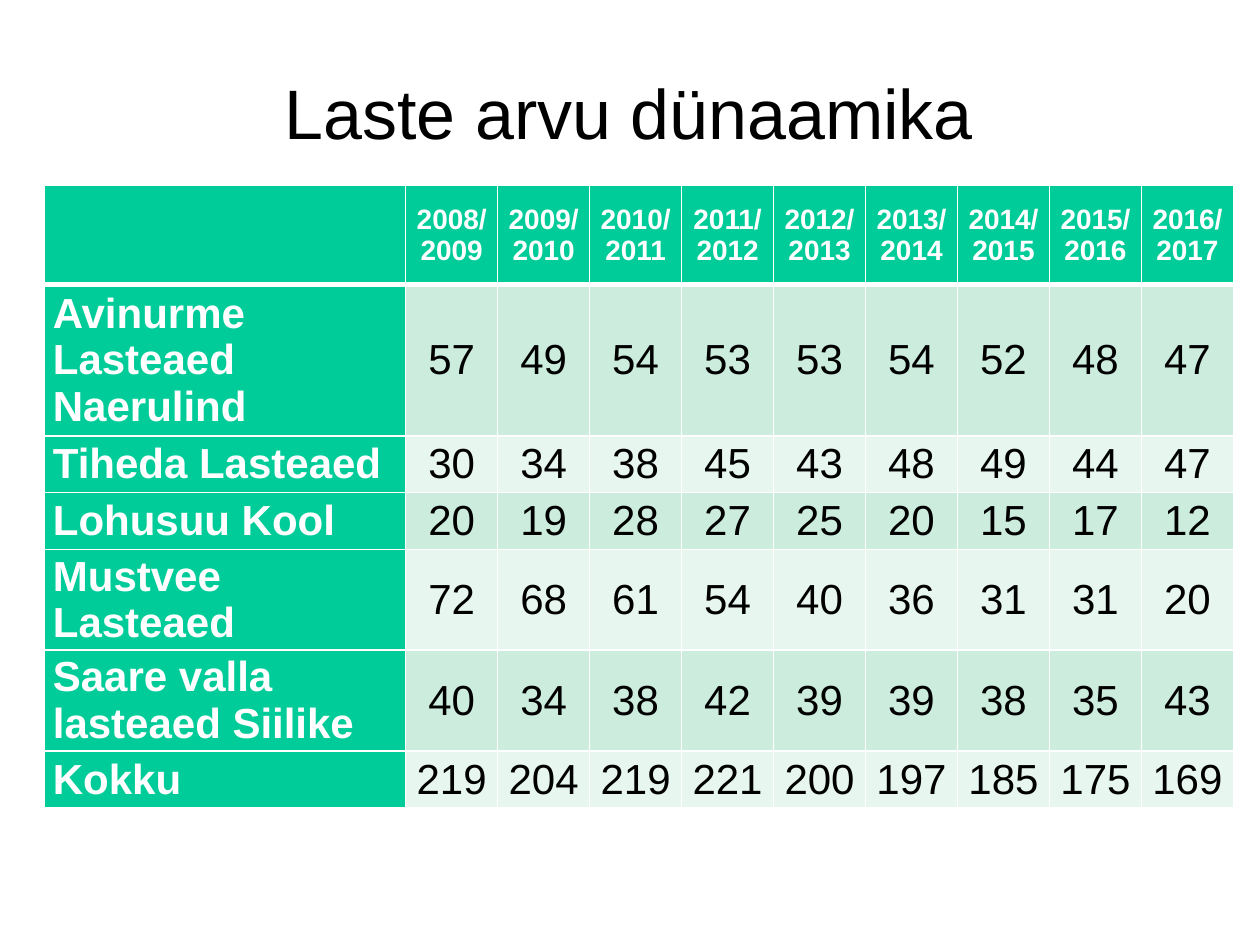
import dataclasses

import lxml.etree
import pptx
import pptx.dml.color
import pptx.enum.text
import pptx.oxml.ns
import pptx.util

Inches = pptx.util.Inches
Pt = pptx.util.Pt
RGBColor = pptx.dml.color.RGBColor
Align = pptx.enum.text.PP_ALIGN
MIDDLE = pptx.enum.text.MSO_ANCHOR.MIDDLE
qn = pptx.oxml.ns.qn

BLACK = RGBColor(0x00, 0x00, 0x00)
WHITE = RGBColor(0xFF, 0xFF, 0xFF)
GREEN = RGBColor(0x00, 0xCC, 0x99)
BANDS = (RGBColor(0xCC, 0xEC, 0xDE), RGBColor(0xE7, 0xF6, 0xEF))


@dataclasses.dataclass(frozen=True)
class CellStyle:
    size: int
    color: RGBColor
    bold: bool
    align: Align


YEAR = CellStyle(16, WHITE, True, Align.CENTER)
INSTITUTION = CellStyle(24, WHITE, True, Align.LEFT)
COUNT = CellStyle(24, BLACK, False, Align.CENTER)

SCHOOL_YEARS = ["2008/\n2009", "2009/\n2010", "2010/2011", "2011/2012", "2012/2013",
                "2013/2014", "2014/\n2015", "2015/\n2016", "2016/\n2017"]
CHILDREN = {
    "Avinurme Lasteaed Naerulind": [57, 49, 54, 53, 53, 54, 52, 48, 47],
    "Tiheda Lasteaed": [30, 34, 38, 45, 43, 48, 49, 44, 47],
    "Lohusuu Kool": [20, 19, 28, 27, 25, 20, 15, 17, 12],
    "Mustvee Lasteaed": [72, 68, 61, 54, 40, 36, 31, 31, 20],
    "Saare valla lasteaed Siilike": [40, 34, 38, 42, 39, 39, 38, 35, 43],
    "Kokku": [219, 204, 219, 221, 200, 197, 185, 175, 169],
}


def apply(target: object, values: dict) -> None:
    for name, value in values.items():
        setattr(target, name, value)


def style_font(font, size: int, color: RGBColor, bold: bool) -> None:
    apply(font, {"name": "Arial", "size": Pt(size), "bold": bold})
    font.color.rgb = color


def add_borders(cell, top: int, bottom: int) -> None:
    properties = cell._tc.get_or_add_tcPr()
    for side, width in {"L": 1, "R": 1, "T": top, "B": bottom}.items():
        line = lxml.etree.SubElement(properties, qn(f"a:ln{side}"), w=str(Pt(width)))
        fill = lxml.etree.SubElement(line, qn("a:solidFill"))
        lxml.etree.SubElement(fill, qn("a:srgbClr"), val=str(WHITE))


def fill_cell(cell, text: str, style: CellStyle, background: RGBColor) -> None:
    apply(cell, {"text": text, "vertical_anchor": MIDDLE,
                 "margin_left": Inches(0.07), "margin_right": Inches(0.07),
                 "margin_top": 0, "margin_bottom": 0})
    cell.fill.solid()
    cell.fill.fore_color.rgb = background
    for paragraph in cell.text_frame.paragraphs:
        paragraph.alignment = style.align
        for run in paragraph.runs:
            style_font(run.font, style.size, style.color, style.bold)


def add_title(slide) -> None:
    title = slide.shapes.add_textbox(Inches(0.5), Inches(0.3), Inches(8.98), Inches(1.24))
    frame = title.text_frame
    apply(frame, {"word_wrap": True, "vertical_anchor": MIDDLE, "margin_left": 0,
                  "margin_right": 0, "margin_top": 0, "margin_bottom": 0})
    heading = frame.paragraphs[0]
    apply(heading, {"text": "Laste arvu dünaamika", "alignment": Align.CENTER,
                    "line_spacing": 0.93})
    style_font(heading.runs[0].font, 40, BLACK, False)


def add_children_table(slide) -> None:
    rows = [["", *SCHOOL_YEARS]] + [[name, *counts] for name, counts in CHILDREN.items()]
    frame = slide.shapes.add_table(len(rows), len(rows[0]), Inches(0.35), Inches(1.47),
                                   Inches(9.45), Inches(4.93))
    table = frame.table
    for index, column in enumerate(table.columns):
        column.width = Inches(0.73 if index else 2.87)
    for index, row in enumerate(table.rows):
        row.height = Inches(0.45 if index else 0.79)
    frame.height = Inches(4.93)

    for r, values in enumerate(rows):
        for c, value in enumerate(values):
            cell = table.cell(r, c)
            # Thick rule between the header and the first row
            add_borders(cell, top=3 if r == 1 else 1, bottom=3 if r == 0 else 1)
            style = YEAR if r == 0 else COUNT if c else INSTITUTION
            background = BANDS[(r - 1) % 2] if r and c else GREEN
            fill_cell(cell, str(value), style, background)


def main() -> None:
    presentation = pptx.Presentation()
    apply(presentation, {"slide_width": Inches(10), "slide_height": Inches(7.5)})
    slide = presentation.slides.add_slide(presentation.slide_layouts[6])
    add_title(slide)
    add_children_table(slide)
    presentation.save("out.pptx")


if __name__ == "__main__":
    main()
